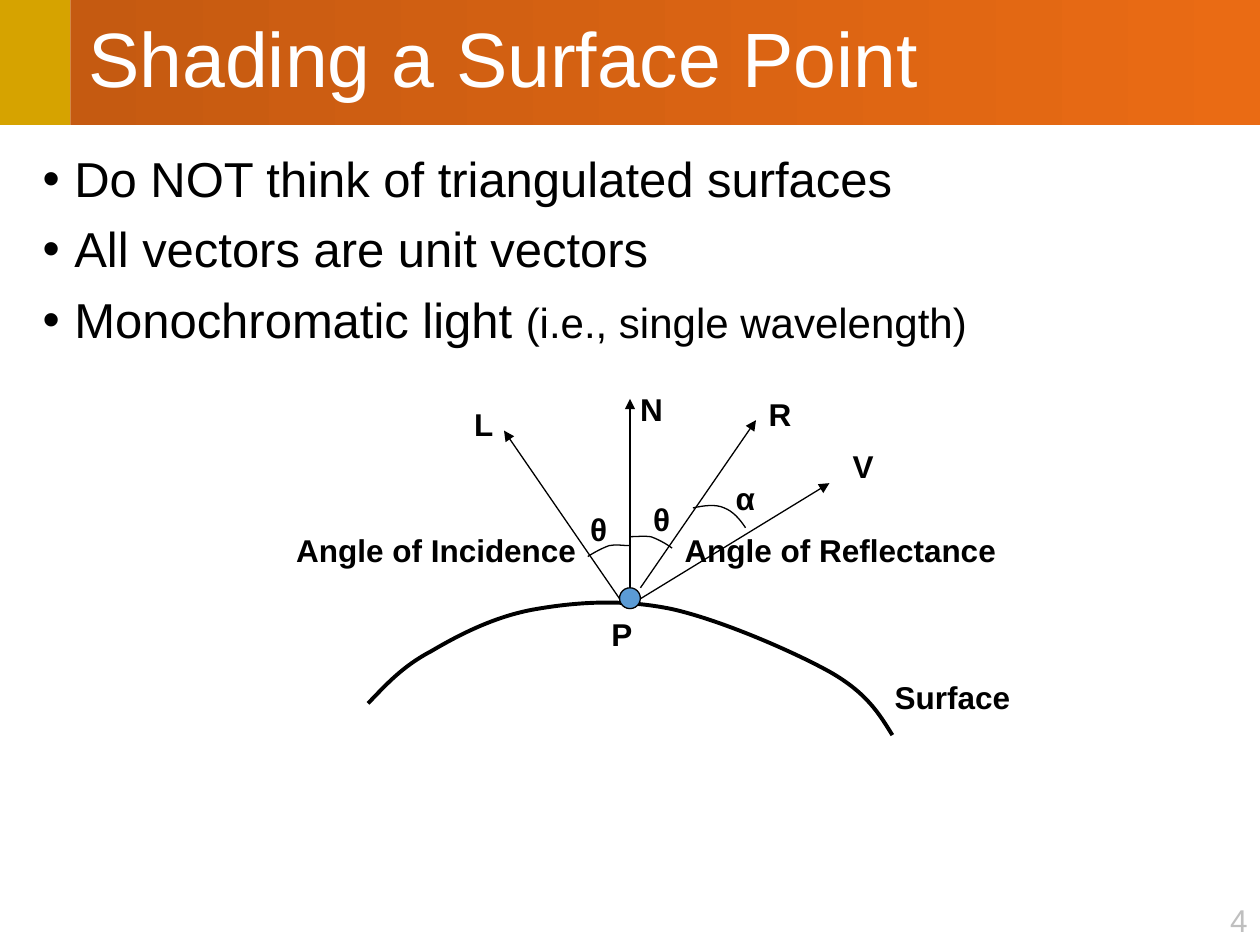
from dataclasses import dataclass
from typing import NamedTuple

from lxml.etree import SubElement
from pptx import Presentation
from pptx.dml.color import RGBColor
from pptx.enum.shapes import MSO_CONNECTOR, MSO_SHAPE
from pptx.enum.text import MSO_ANCHOR, MSO_AUTO_SIZE, PP_ALIGN
from pptx.oxml.ns import qn
from pptx.util import Cm, Pt


@dataclass(frozen=True)
class Theme:
    font: str = "Arial"
    ink: RGBColor = RGBColor(0x00, 0x00, 0x00)
    white: RGBColor = RGBColor(0xFF, 0xFF, 0xFF)
    gold: RGBColor = RGBColor(0xD6, 0xA3, 0x00)
    band_start: RGBColor = RGBColor(0xC5, 0x5A, 0x11)
    band_end: RGBColor = RGBColor(0xEA, 0x6B, 0x14)
    point: RGBColor = RGBColor(0x5B, 0x9B, 0xD5)
    page_number: RGBColor = RGBColor(0xBF, 0xBF, 0xBF)
    title_size: Pt = Pt(44)
    body_size: Pt = Pt(28)
    aside_size: Pt = Pt(24)
    label_size: Pt = Pt(18)
    thin: Pt = Pt(0.75)
    thick: Pt = Pt(2.25)


THEME = Theme()
SLIDE_WIDTH, SLIDE_HEIGHT = 25.4, 19.05
BAND_HEIGHT, ACCENT_WIDTH = 2.52, 1.42
LABEL_HEIGHT = 1.02


class Label(NamedTuple):
    text: str
    left: float
    top: float
    width: float


class Vector(NamedTuple):
    start: tuple[float, float]
    tip: tuple[float, float]


class Curve(NamedTuple):
    """A start point, then two control points and an end point per segment."""
    points: list[tuple[float, float]]
    weight: Pt = THEME.thin


BULLETS = [
    ("Do NOT think of triangulated surfaces", ""),
    ("All vectors are unit vectors", ""),
    ("Monochromatic light ", "(i.e., single wavelength)"),
]

SURFACE = Curve([
    (7.42, 14.18), (7.77, 13.82), (8.1, 13.44), (8.69, 13.13),
    (9.25, 12.8), (9.98, 12.42), (10.8, 12.28),
    (11.61, 12.14), (12.55, 12.07), (13.55, 12.28),
    (14.53, 12.5), (15.98, 13.13), (16.72, 13.54),
    (17.48, 13.97), (17.73, 14.4), (17.99, 14.82),
], THEME.thick)

ANGLE_ARCS = [
    Curve([(11.85, 11.22), (11.99, 11.13), (12.14, 11.05), (12.28, 11),
           (12.42, 10.97), (12.55, 11), (12.7, 11)]),
    Curve([(13.55, 11.05), (13.41, 10.95), (13.26, 10.87), (13.12, 10.82),
           (12.98, 10.8), (12.84, 10.82), (12.7, 10.82)]),
    Curve([(13.97, 10.24), (14.2, 10.19), (14.43, 10.16), (14.6, 10.24),
           (14.78, 10.31), (14.91, 10.46), (15.03, 10.64)]),
]

VECTORS = [
    Vector((12.7, 11.85), (12.7, 8.04)),
    Vector((12.49, 12.07), (10.16, 8.68)),
    Vector((12.91, 11.85), (15.24, 8.47)),
    Vector((12.91, 12.07), (16.72, 9.74)),
]

LABELS = [
    Label("N", 12.65, 7.73, 0.97),
    Label("L", 9.31, 8.05, 0.89),
    Label("R", 15.24, 7.83, 0.97),
    Label("V", 16.93, 8.89, 0.94),
    Label("θ", 11.64, 10.16, 0.86),
    Label("θ", 12.91, 9.95, 0.86),
    Label("α", 14.57, 9.53, 0.91),
    Label("P", 12.07, 12.28, 0.94),
    Label("Angle of Incidence", 5.72, 10.58, 6.15),
    Label("Angle of Reflectance", 13.55, 10.58, 6.78),
    Label("Surface", 17.78, 13.55, 2.84),
]


def style_font(para, size: Pt, color: RGBColor, bold: bool = False) -> None:
    para.font.name = THEME.font
    para.font.size = size
    para.font.color.rgb = color
    para.font.bold = bold


def add_block(page, kind, left: float, top: float, width: float, height: float):
    block = page.shapes.add_shape(kind, Cm(left), Cm(top), Cm(width), Cm(height))
    block.shadow.inherit = False
    block.line.fill.background()
    return block


def add_header(page) -> None:
    accent = add_block(page, MSO_SHAPE.RECTANGLE, 0, 0, ACCENT_WIDTH, BAND_HEIGHT)
    accent.fill.solid()
    accent.fill.fore_color.rgb = THEME.gold

    band = add_block(page, MSO_SHAPE.RECTANGLE, ACCENT_WIDTH, 0,
                     SLIDE_WIDTH - ACCENT_WIDTH, BAND_HEIGHT)
    band.fill.gradient()
    band.fill.gradient_angle = 0
    for stop, color in zip(band.fill.gradient_stops, (THEME.band_start, THEME.band_end)):
        stop.color.rgb = color
    frame = band.text_frame
    frame.vertical_anchor = MSO_ANCHOR.MIDDLE
    frame.margin_left = Cm(0.36)
    para = frame.paragraphs[0]
    para.text = "Shading a Surface Point"
    para.alignment = PP_ALIGN.LEFT
    para.line_spacing = 0.9
    style_font(para, THEME.title_size, THEME.white)


def add_bullets(page) -> None:
    box = page.shapes.add_textbox(Cm(0.61), Cm(3), Cm(23.83), Cm(11.96))
    frame = box.text_frame
    frame.word_wrap = True
    for index, (main, aside) in enumerate(BULLETS):
        para = frame.add_paragraph() if index else frame.paragraphs[0]
        para.line_spacing = 0.9
        para.space_before = Pt(10)
        properties = para._p.get_or_add_pPr()
        properties.set("marL", str(Cm(0.64)))
        properties.set("indent", str(Cm(-0.64)))
        SubElement(properties, qn("a:buFont"), typeface=THEME.font)
        SubElement(properties, qn("a:buChar"), char="•")
        style_font(para, THEME.body_size, THEME.ink)
        para.add_run().text = main
        if aside:
            span = para.add_run()
            span.text = aside
            span.font.size = THEME.aside_size


def add_label(page, label: Label, color: RGBColor = THEME.ink, bold: bool = True,
              alignment: PP_ALIGN = PP_ALIGN.CENTER) -> None:
    box = page.shapes.add_textbox(Cm(label.left), Cm(label.top),
                                  Cm(label.width), Cm(LABEL_HEIGHT))
    frame = box.text_frame
    frame.word_wrap = False
    frame.auto_size = MSO_AUTO_SIZE.SHAPE_TO_FIT_TEXT
    para = frame.paragraphs[0]
    para.text = label.text
    para.alignment = alignment
    style_font(para, THEME.label_size, color, bold)


def add_curve(page, curve: Curve) -> None:
    """Draw a freeform whose line segments are merged by threes into Béziers."""
    start, *rest = [(Cm(x), Cm(y)) for x, y in curve.points]
    builder = page.shapes.build_freeform(*start)
    builder.add_line_segments(rest, close=False)
    shape = builder.convert_to_shape()
    shape.shadow.inherit = False
    shape.fill.background()
    shape.line.color.rgb = THEME.ink
    shape.line.width = curve.weight
    outline = shape._element.find(".//" + qn("a:path"))
    segments = outline.findall(qn("a:lnTo"))
    for first in range(0, len(segments), 3):
        bezier = SubElement(outline, qn("a:cubicBezTo"))
        for segment in segments[first:first + 3]:
            bezier.append(segment[0])
            outline.remove(segment)


def add_vector(page, vector: Vector) -> None:
    ends = [Cm(value) for value in (*vector.start, *vector.tip)]
    arrow = page.shapes.add_connector(MSO_CONNECTOR.STRAIGHT, *ends)
    arrow.line.color.rgb = THEME.ink
    arrow.line.width = THEME.thin
    SubElement(arrow.line._get_or_add_ln(), qn("a:tailEnd"), type="triangle")
    SubElement(arrow._element.spPr, qn("a:effectLst"))


def add_surface_point(page) -> None:
    point = add_block(page, MSO_SHAPE.OVAL, 12.49, 11.85, 0.42, 0.42)
    point.fill.solid()
    point.fill.fore_color.rgb = THEME.point
    point.line.color.rgb = THEME.ink
    point.line.width = THEME.thin


def main() -> None:
    deck = Presentation()
    deck.slide_width, deck.slide_height = Cm(SLIDE_WIDTH), Cm(SLIDE_HEIGHT)
    page = deck.slides.add_slide(deck.slide_layouts[6])
    add_header(page)
    add_bullets(page)
    add_curve(page, SURFACE)
    add_surface_point(page)
    for vector in VECTORS:
        add_vector(page, vector)
    for arc in ANGLE_ARCS:
        add_curve(page, arc)
    for label in LABELS:
        add_label(page, label)
    add_label(page, Label("4", 24.1, 18.03, 1.3), THEME.page_number, False, PP_ALIGN.RIGHT)
    deck.save("out.pptx")


if __name__ == "__main__":
    main()
